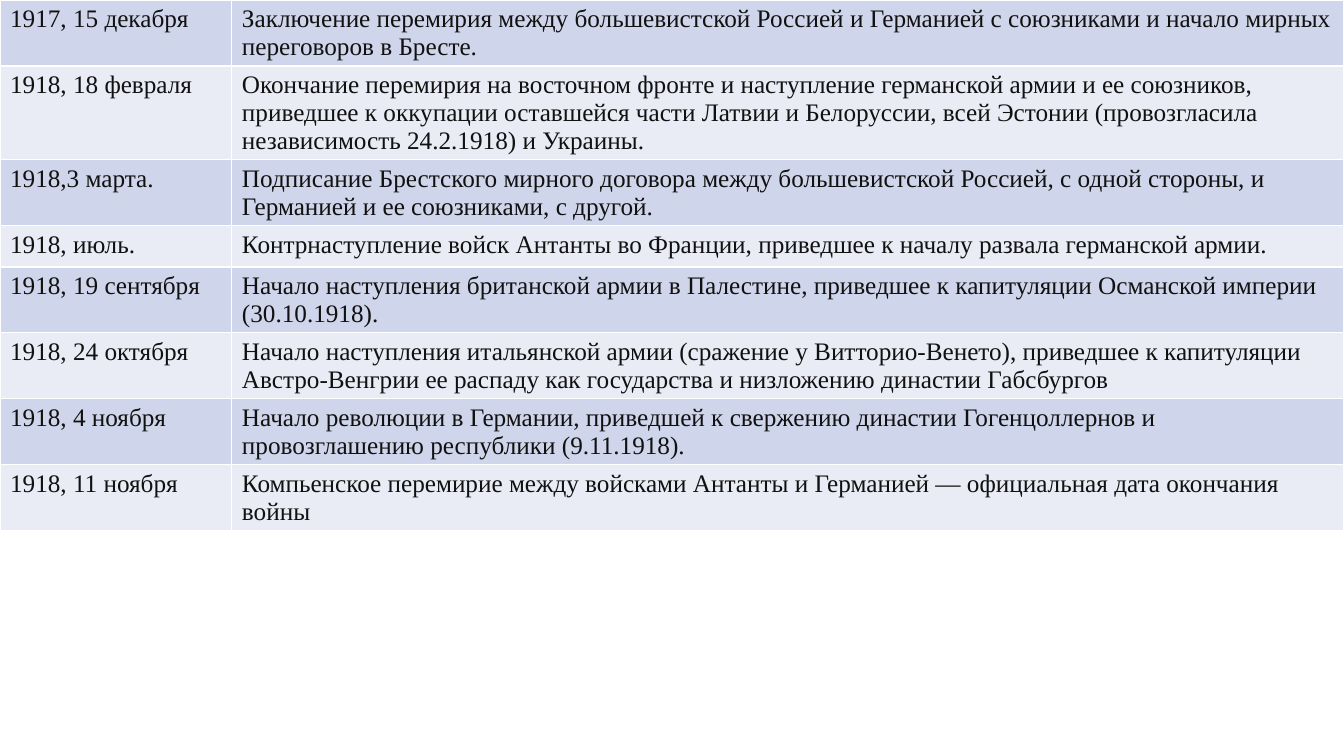
from lxml.etree import SubElement as Sub
from pptx import Presentation as Deck
from pptx.dml.color import RGBColor as Rgb
from pptx.oxml.ns import qn
from pptx.util import Inches, Pt

FONT = "Times New Roman"
INK = "111111"
EDGE = "FFFFFF"
BANDS = ("CFD5EA", "E9EBF5")
COLS = (2.3, 11.03)
EVENTS = (
    ("1917, 15 декабря",
     "Заключение перемирия между большевистской Россией и Германией "
     "с союзниками и начало мирных переговоров в Бресте."),
    ("1918, 18 февраля",
     "Окончание перемирия на восточном фронте и наступление германской армии "
     "и ее союзников, приведшее к оккупации оставшейся части Латвии и Белоруссии, "
     "всей Эстонии (провозгласила независимость 24.2.1918) и Украины."),
    ("1918,3 марта.",
     "Подписание Брестского мирного договора между большевистской Россией, "
     "с одной стороны, и Германией и ее союзниками, с другой."),
    ("1918, июль.",
     "Контрнаступление войск Антанты во Франции, приведшее к началу развала "
     "германской армии."),
    ("1918, 19 сентября",
     "Начало наступления британской армии в Палестине, приведшее к капитуляции "
     "Османской империи (30.10.1918)."),
    ("1918, 24 октября",
     "Начало наступления итальянской армии (сражение у Витторио-Венето), "
     "приведшее к капитуляции Австро-Венгрии ее распаду как государства "
     "и низложению династии Габсбургов"),
    ("1918, 4 ноября",
     "Начало революции в Германии, приведшей к свержению династии Гогенцоллернов "
     "и провозглашению республики (9.11.1918)."),
    ("1918, 11 ноября",
     "Компьенское перемирие между войсками Антанты и Германией — официальная дата "
     "окончания войны"),
)


def color(code):
    return Rgb.from_string(code)


def add_edges(cell):
    props = cell._tc.get_or_add_tcPr()
    for side in ("lnL", "lnR", "lnT", "lnB"):
        line = Sub(props, qn(f"a:{side}"), w=str(Pt(1)))
        Sub(Sub(line, qn("a:solidFill")), qn("a:srgbClr"), val=EDGE)


def fill_cell(cell, text, band):
    add_edges(cell)
    cell.fill.solid()
    cell.fill.fore_color.rgb = color(band)
    run = cell.text_frame.paragraphs[0].add_run()
    run.text = text
    run.font.name = FONT
    run.font.size = Pt(18)
    run.font.color.rgb = color(INK)


def add_dates(slide):
    frame = slide.shapes.add_table(
        len(EVENTS), len(COLS), 0, 0, Inches(13.33), Inches(5.61))
    table = frame.table
    table.first_row = False
    for col, width in zip(table.columns, COLS):
        col.width = Inches(width)
    for num, (row, event) in enumerate(zip(table.rows, EVENTS)):
        row.height = Inches(0.41)
        for cell, text in zip(row.cells, event):
            fill_cell(cell, text, BANDS[num % 2])
    frame.height = Inches(5.61)


def main():
    deck = Deck()
    deck.slide_width = Inches(13.33)
    deck.slide_height = Inches(7.5)
    add_dates(deck.slides.add_slide(deck.slide_layouts[6]))
    deck.save("out.pptx")


if __name__ == "__main__":
    main()
